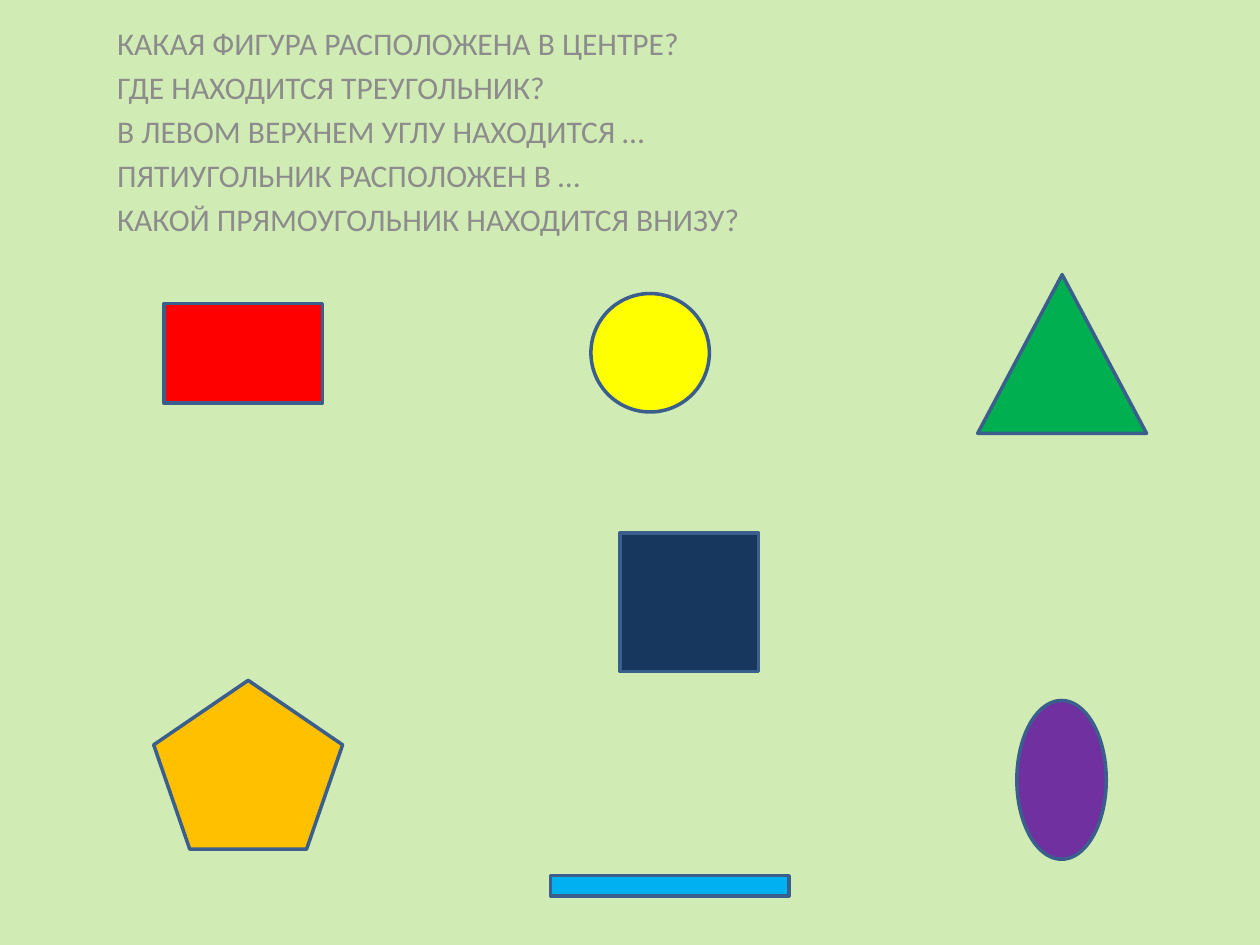
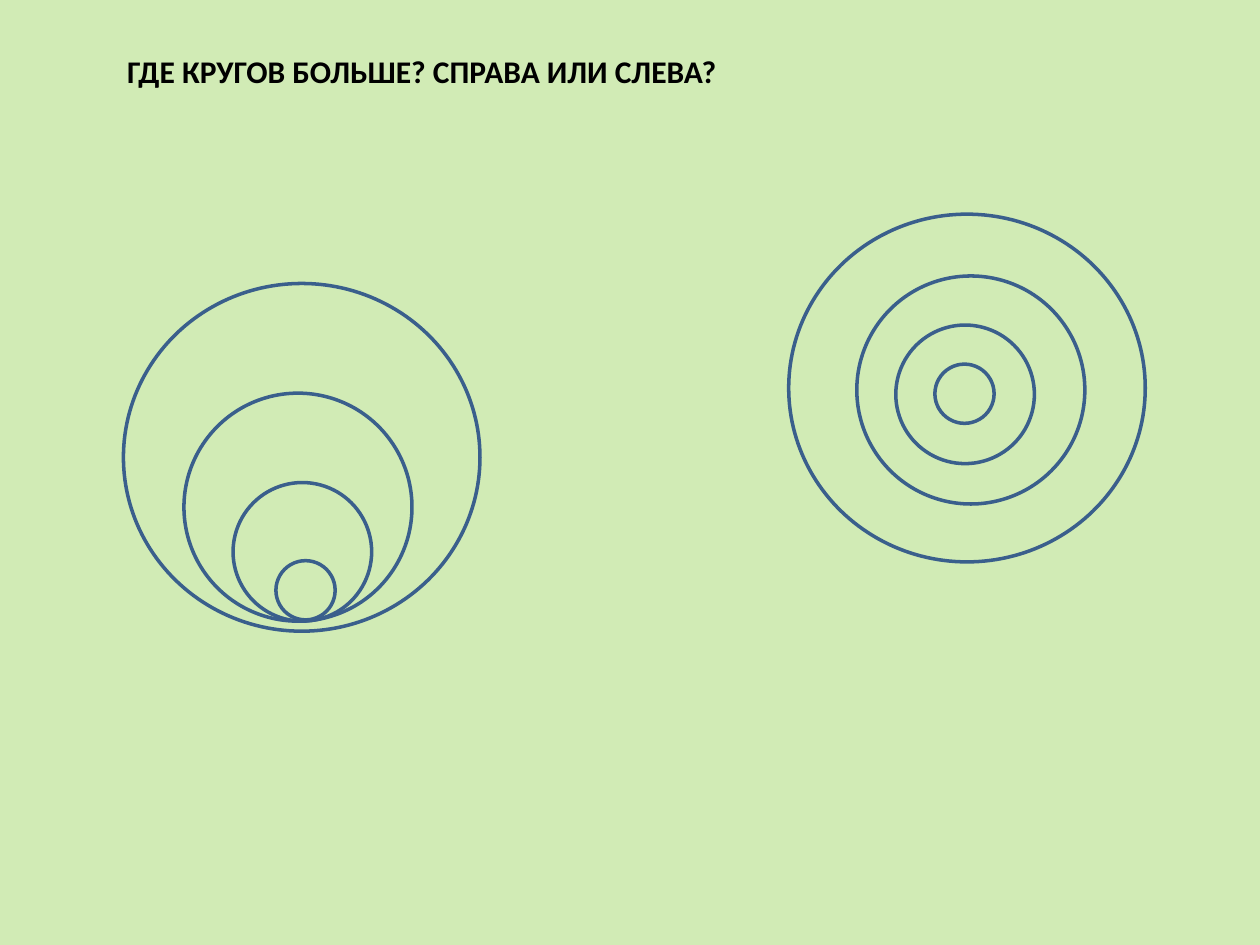
import pptx
import pptx.dml.color
import pptx.enum.shapes
import pptx.enum.text
import pptx.util

SHAPE = pptx.enum.shapes.MSO_SHAPE
ANCHOR = pptx.enum.text.MSO_ANCHOR
COLUMNS, ROWS = 100, 75
CELL = pptx.util.Inches(0.1)
SECTION_LAYOUT = 2
BACKGROUND = "D1EBB5"
OUTLINE = "3A5F8C"
FONT = "Calibri"

QUESTIONS = [
    "КАКАЯ ФИГУРА РАСПОЛОЖЕНА В ЦЕНТРЕ?",
    "ГДЕ НАХОДИТСЯ ТРЕУГОЛЬНИК?",
    "В ЛЕВОМ ВЕРХНЕМ УГЛУ НАХОДИТСЯ …",
    "ПЯТИУГОЛЬНИК РАСПОЛОЖЕН В …",
    "КАКОЙ ПРЯМОУГОЛЬНИК НАХОДИТСЯ ВНИЗУ?",
]
FIGURES = [
    (SHAPE.RECTANGLE, "17375E", (49.2, 42.3, 11, 11)),
    (SHAPE.RECTANGLE, "FF0000", (13, 24.1, 12.6, 7.9)),
    (SHAPE.RECTANGLE, "00B0F0", (43.7, 69.5, 18.9, 1.6)),
    (SHAPE.OVAL, "FFFF00", (46.9, 23.3, 9.4, 9.4)),
    (SHAPE.OVAL, "7030A0", (80.7, 55.6, 7.1, 12.6)),
    (SHAPE.REGULAR_PENTAGON, "FFC000", (12.2, 54, 15, 13.4)),
    (SHAPE.ISOSCELES_TRIANGLE, "00B050", (77.6, 21.8, 13.4, 12.6)),
]
RING_SIZES = [(28.3, 27.6), (18.1, 18.1), (11, 11), (4.7, 4.7)]
LEFT_RINGS = [(9.8, 22.5), (14.6, 31.2), (18.5, 38.3), (21.9, 44.5)]
RIGHT_RINGS = [(62.6, 17), (68, 21.9), (71.1, 25.8), (74.2, 28.9)]


def color(hex_string):
    """Turn a hex string into a colour."""
    return pptx.dml.color.RGBColor.from_string(hex_string)


def grid(*cells):
    """Convert counts of grid cells into slide lengths."""
    return [round(count * CELL) for count in cells]


def add_slide(presentation):
    """Add a slide with the shared green background."""
    slide = presentation.slides.add_slide(presentation.slide_layouts[SECTION_LAYOUT])
    slide.background.fill.solid()
    slide.background.fill.fore_color.rgb = color(BACKGROUND)
    return slide


def fill_placeholder(placeholder, lines, box, anchor, text_color, bold=False):
    """Place a placeholder and write its lines in the shared text style."""
    placeholder.left, placeholder.top, placeholder.width, placeholder.height = grid(*box)
    text_frame = placeholder.text_frame
    text_frame.text = "\n".join(lines)
    text_frame.vertical_anchor = anchor
    for paragraph in text_frame.paragraphs:
        paragraph.alignment = pptx.enum.text.PP_ALIGN.LEFT
        for run in paragraph.runs:
            run.font.name = FONT
            run.font.size = pptx.util.Pt(18)
            run.font.bold = bold
            run.font.color.rgb = color(text_color)


def add_figure(slide, kind, box, fill=None):
    """Draw an outlined figure, filled when a colour is given."""
    shape = slide.shapes.add_shape(kind, *grid(*box))
    shape.shadow.inherit = False
    shape.line.color.rgb = color(OUTLINE)
    shape.line.width = pptx.util.Pt(2)
    if fill:
        shape.fill.solid()
        shape.fill.fore_color.rgb = color(fill)
    else:
        shape.fill.background()


def remove_placeholder(placeholder):
    """Take an unused placeholder off its slide."""
    element = placeholder.element
    element.getparent().remove(element)


def build_positions(presentation):
    """Build the slide about where the figures are."""
    slide = add_slide(presentation)
    remove_placeholder(slide.shapes.title)
    fill_placeholder(slide.placeholders[1], QUESTIONS, (8.3, 0, 85, 19.4),
                     ANCHOR.BOTTOM, "8C8C8C")
    for kind, fill, box in FIGURES:
        add_figure(slide, kind, box, fill)


def build_circles(presentation):
    """Build the slide that compares two groups of circles."""
    slide = add_slide(presentation)
    remove_placeholder(slide.placeholders[1])
    fill_placeholder(slide.shapes.title, ["ГДЕ КРУГОВ БОЛЬШЕ? СПРАВА ИЛИ СЛЕВА?"],
                     (9.1, 3.6, 85, 7.1), ANCHOR.TOP, "000000", bold=True)
    for rings in (LEFT_RINGS, RIGHT_RINGS):
        for corner, size in zip(rings, RING_SIZES):
            add_figure(slide, SHAPE.OVAL, corner + size)


def main():
    """Build and save the presentation."""
    presentation = pptx.Presentation()
    presentation.slide_width, presentation.slide_height = grid(COLUMNS, ROWS)
    build_positions(presentation)
    build_circles(presentation)
    presentation.save("out.pptx")


if __name__ == "__main__":
    main()
